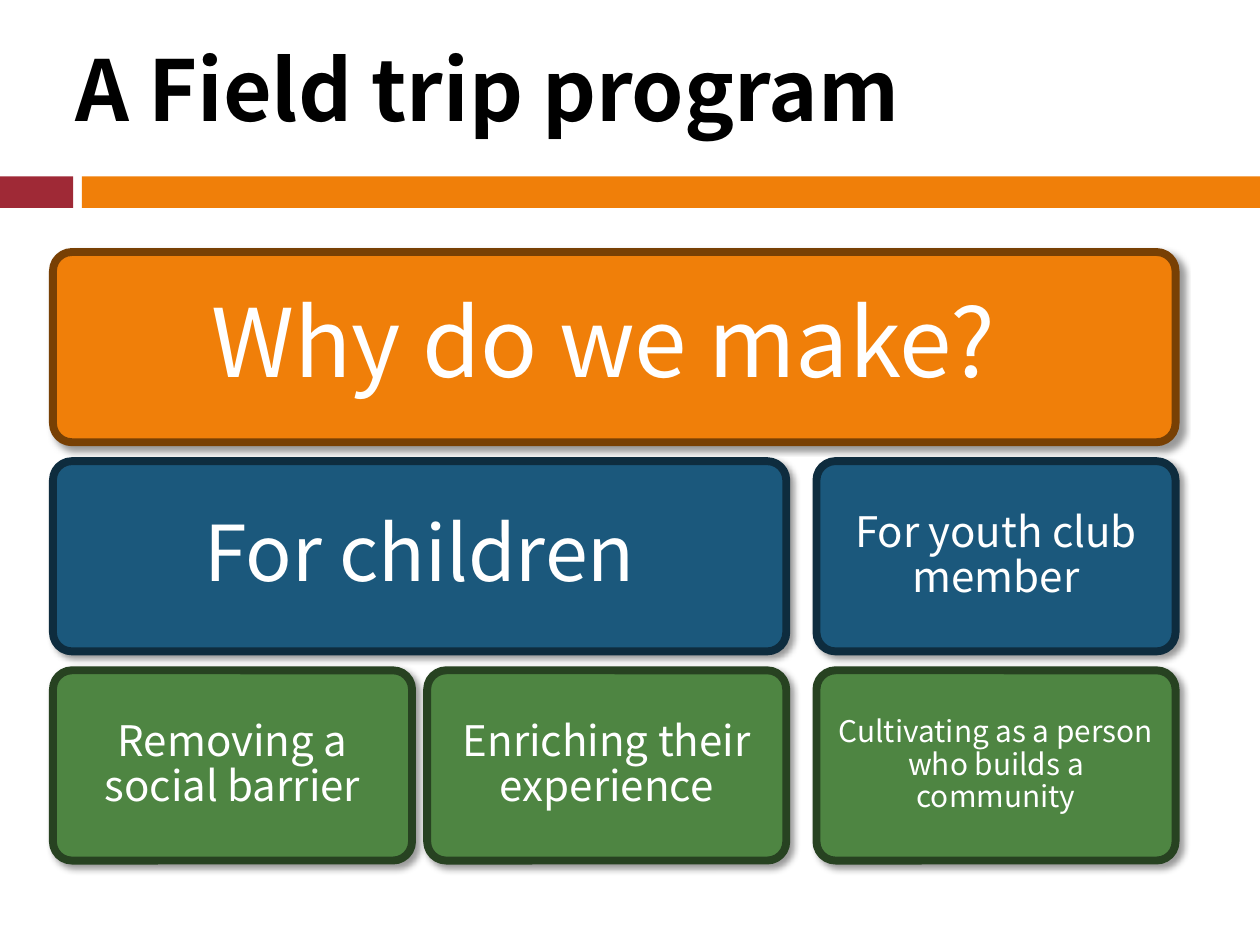
import pptx
import pptx.util
import pptx.dml.color
import pptx.enum.shapes
import pptx.enum.text
import pptx.oxml
import pptx.oxml.ns

Inches = pptx.util.Inches
Pt = pptx.util.Pt
RGBColor = pptx.dml.color.RGBColor
MSO_SHAPE = pptx.enum.shapes.MSO_SHAPE
PP_ALIGN = pptx.enum.text.PP_ALIGN
MSO_ANCHOR = pptx.enum.text.MSO_ANCHOR

FONT = "Noto Sans CJK SC"
BLACK = RGBColor(0x00, 0x00, 0x00)
WHITE = RGBColor(0xFF, 0xFF, 0xFF)
RED = RGBColor(0x9F, 0x29, 0x36)
ORANGE = RGBColor(0xF0, 0x7F, 0x09)
BROWN = RGBColor(0x78, 0x40, 0x04)
BLUE = RGBColor(0x1B, 0x58, 0x7C)
NAVY = RGBColor(0x0E, 0x2C, 0x3E)
GREEN = RGBColor(0x4E, 0x85, 0x42)
DARK_GREEN = RGBColor(0x27, 0x42, 0x21)

SHADOW_XML = (
    f'<a:effectLst {pptx.oxml.ns.nsdecls("a")}>'
    f'<a:outerShdw blurRad="{Pt(4)}" dist="{Pt(3)}" dir="2700000" rotWithShape="0">'
    '<a:srgbClr val="000000"><a:alpha val="40000"/></a:srgbClr>'
    '</a:outerShdw></a:effectLst>'
)

presentation = pptx.Presentation()
presentation.slide_width = Inches(10)
presentation.slide_height = Inches(7.5)
slide = presentation.slides.add_slide(presentation.slide_layouts[5])

# Divider under the title
for left, width, color in [(0, 0.58, RED), (0.65, 9.35, ORANGE)]:
    band = slide.shapes.add_shape(
        MSO_SHAPE.RECTANGLE, Inches(left), Inches(1.4), Inches(width), Inches(0.25))
    band.shadow.inherit = False
    band.fill.solid()
    band.fill.fore_color.rgb = color
    band.line.fill.background()

# Hierarchy: a box spans the columns of the boxes below it
COLUMN_LEFTS = [0.42, 3.39, 6.48]
COLUMN_WIDTH = 2.85
ROW_TOP, ROW_PITCH, ROW_HEIGHT = 2, 1.66, 1.51
ROW_COLORS = [(ORANGE, BROWN), (BLUE, NAVY), (GREEN, DARK_GREEN)]

# row, first column, last column, text, font size, inset
boxes = [
    (0, 0, 2, "Why do we make? ", 54, 0.19),
    (1, 0, 1, "For children", 44, 0.14),
    (2, 0, 0, "Removing a social barrier", 24, 0.06),
    (2, 1, 1, "Enriching their experience", 24, 0.06),
    (1, 2, 2, "For youth club member", 24, 0.06),
    (2, 2, 2, "Cultivating as a person who builds a community", 17, 0.03),
]
for row, first, last, text, size, inset in boxes:
    left = COLUMN_LEFTS[first]
    box = slide.shapes.add_shape(
        MSO_SHAPE.ROUNDED_RECTANGLE, Inches(left), Inches(ROW_TOP + row * ROW_PITCH),
        Inches(COLUMN_LEFTS[last] + COLUMN_WIDTH - left), Inches(ROW_HEIGHT))
    box.adjustments[0] = 0.1
    fill_color, border_color = ROW_COLORS[row]
    box.fill.solid()
    box.fill.fore_color.rgb = fill_color
    box.line.color.rgb = border_color
    box.line.width = Pt(4.5)
    box._element.spPr.append(pptx.oxml.parse_xml(SHADOW_XML))

    frame = box.text_frame
    frame.word_wrap = True
    frame.vertical_anchor = MSO_ANCHOR.MIDDLE
    frame.margin_left = frame.margin_right = Inches(inset)
    frame.margin_top = frame.margin_bottom = Inches(inset)
    frame.text = text
    paragraph = frame.paragraphs[0]
    paragraph.alignment = PP_ALIGN.CENTER
    paragraph.line_spacing = 0.9
    paragraph.font.name = FONT
    paragraph.font.size = Pt(size)
    paragraph.font.color.rgb = WHITE

title = slide.shapes.title
title.left, title.top = Inches(0.5), Inches(0.24)
title.width, title.height = Inches(9.33), Inches(0.91)
title.text_frame.text = "A Field trip program"
title.text_frame.auto_size = pptx.enum.text.MSO_AUTO_SIZE.NONE
title.text_frame.vertical_anchor = MSO_ANCHOR.MIDDLE
heading = title.text_frame.paragraphs[0]
heading.alignment = PP_ALIGN.LEFT
heading.font.name = FONT
heading.font.size = Pt(48)
heading.font.bold = True
heading.font.color.rgb = BLACK

presentation.save("out.pptx")
